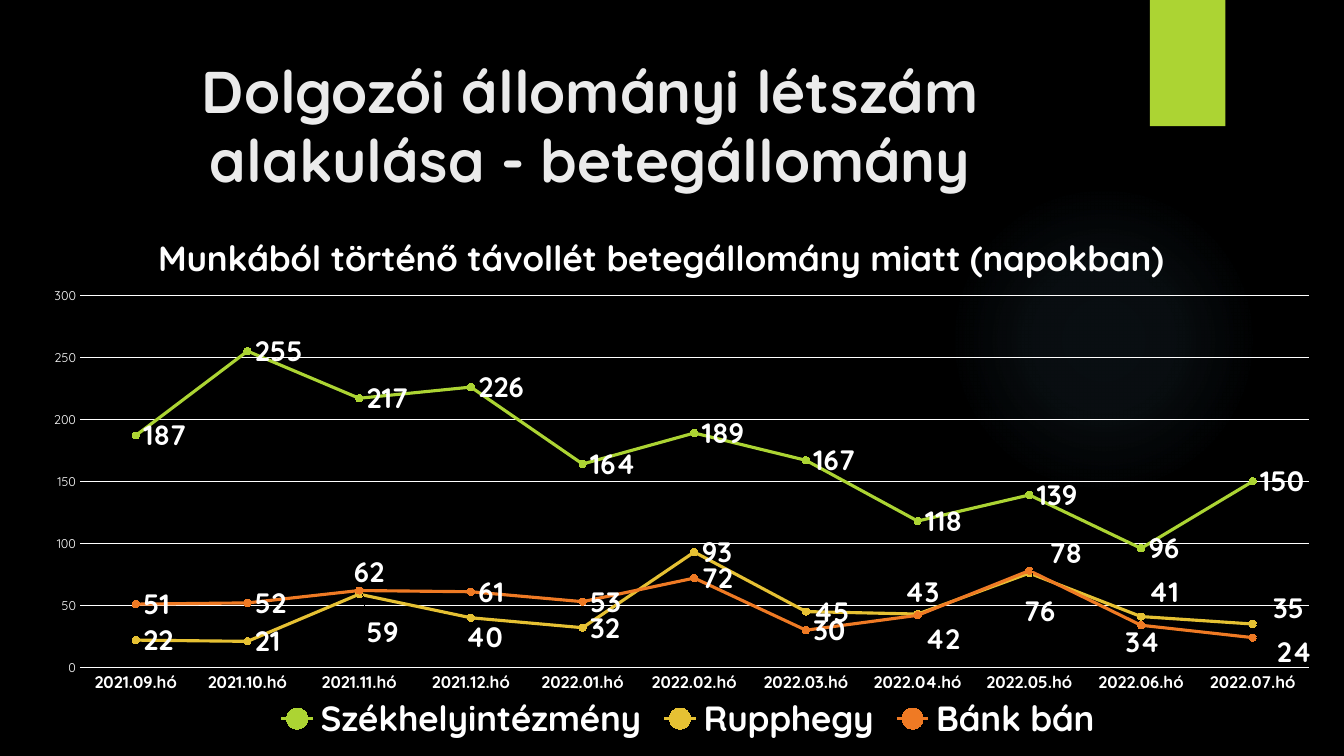
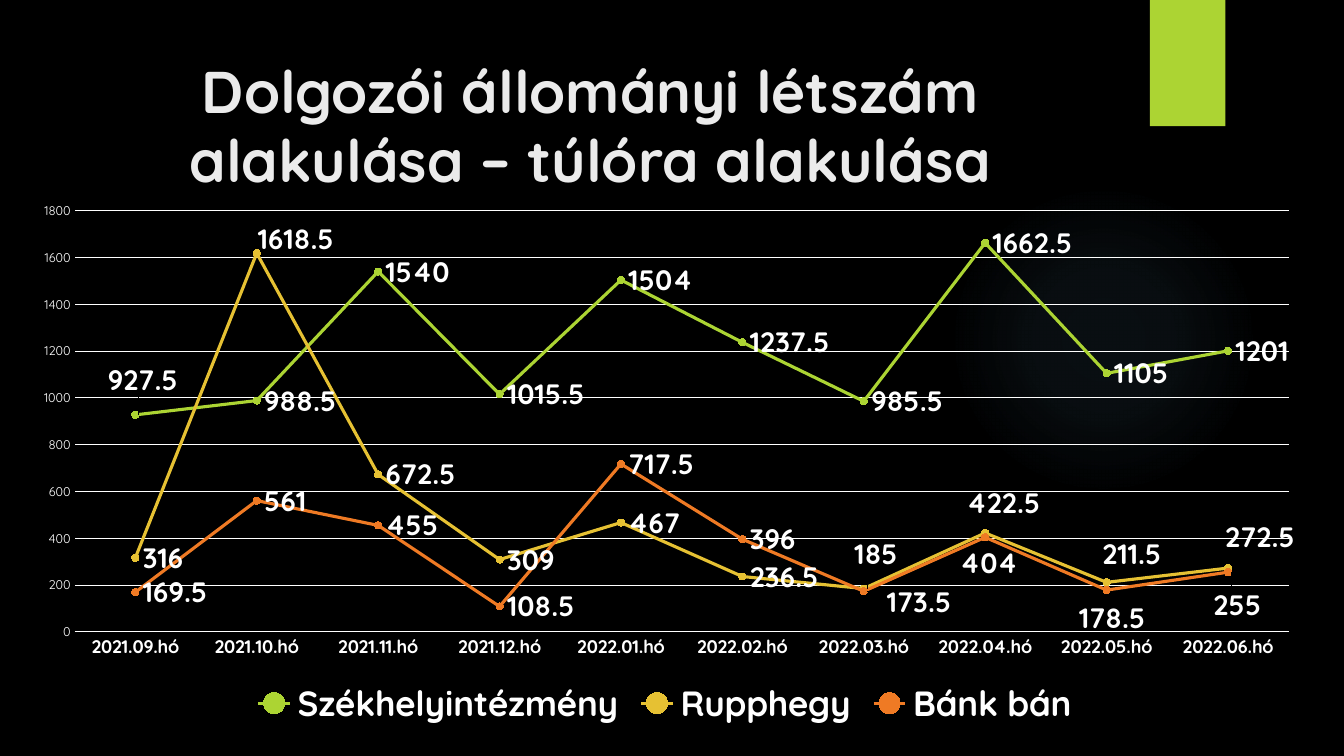
from dataclasses import dataclass, field

from lxml.etree import SubElement
from pptx import Presentation
from pptx.chart.data import CategoryChartData
from pptx.dml.color import RGBColor
from pptx.enum.chart import (XL_CHART_TYPE, XL_LABEL_POSITION, XL_LEGEND_POSITION,
                             XL_MARKER_STYLE, XL_TICK_MARK)
from pptx.enum.shapes import MSO_SHAPE
from pptx.enum.text import MSO_ANCHOR, PP_ALIGN
from pptx.oxml import parse_xml
from pptx.oxml.ns import nsdecls, qn
from pptx.util import Cm, Pt

FONT = "Quicksand"
BLACK = RGBColor(0x00, 0x00, 0x00)
WHITE = RGBColor(0xFF, 0xFF, 0xFF)
TITLE_GREY = RGBColor(0xEB, 0xEB, 0xEB)
GREEN = RGBColor(0xAC, 0xD4, 0x33)
YELLOW = RGBColor(0xE6, 0xC1, 0x33)
ORANGE = RGBColor(0xEF, 0x7A, 0x24)
GLOW_BLUE = RGBColor(0x7A, 0xC4, 0xF0)

MONTHS = ([f"2021.{m:02}.hó" for m in range(9, 13)]
          + [f"2022.{m:02}.hó" for m in range(1, 8)])


@dataclass
class LineSeries:
    """One line; label_shifts maps a point to its label's shift in percent of the chart."""
    name: str
    color: RGBColor
    values: list[float]
    label_shifts: dict[int, tuple[float, float]] = field(default_factory=dict)


@dataclass
class ChartSlide:
    """Box lengths are in cm, plot and heading positions in percent of the chart."""
    title: str
    box: tuple[float, float, float, float]
    plot: tuple[float, float, float, float]
    axis_max: int
    axis_step: int
    month_size: int
    series: list[LineSeries]
    heading: str = ""
    heading_at: tuple[float, float] = (0, 0)


SLIDES = [
    ChartSlide(
        "Dolgozói állományi létszám alakulása - betegállomány",
        (1.14, 5.16, 32.39, 13.67), (2.7, 16.7, 95.6, 68.6), 300, 50, 12,
        [
            LineSeries("Székhelyintézmény", GREEN,
                       [187, 255, 217, 226, 164, 189, 167, 118, 139, 96, 150]),
            LineSeries("Rupphegy", YELLOW,
                       [22, 21, 59, 40, 32, 93, 45, 43, 76, 41, 35],
                       {2: (0, 7), 3: (-1, 3.5), 7: (-1.6, -4), 8: (-1, 7),
                        9: (0, -4.6), 10: (1, -3)}),
            LineSeries("Bánk bán", ORANGE,
                       [51, 52, 62, 61, 53, 72, 30, 42, 78, 34, 24],
                       {2: (-1, -3.5), 7: (0, 4.3), 8: (1, -3.3),
                        9: (-1.8, 3), 10: (1.3, 2.7)}),
        ],
        "Munkából történő távollét betegállomány miatt (napokban)", (8.3, 4)),
    ChartSlide(
        "Dolgozói állományi létszám alakulása – túlóra alakulása",
        (0.41, 4.85, 32.69, 13.59), (4.5, 3.4, 93.6, 78.1), 1800, 200, 13,
        [
            LineSeries("Székhelyintézmény", GREEN,
                       [927.5, 988.5, 1540, 1015.5, 1504, 1237.5, 985.5, 1662.5, 1105, 1201],
                       {0: (-2.7, -6.5)}),
            LineSeries("Rupphegy", YELLOW,
                       [316, 1618.5, 672.5, 309, 467, 236.5, 185, 422.5, 211.5, 272.5],
                       {1: (-0.5, -2.6), 6: (-1.3, -6.5), 7: (-2, -5.6),
                        8: (-0.9, -5.2), 9: (-0.8, -5.8)}),
            LineSeries("Bánk bán", ORANGE,
                       [169.5, 561, 455, 108.5, 717.5, 396, 173.5, 404, 178.5, 255],
                       {6: (1.2, 1.9), 7: (-2.5, 4.7), 8: (-2.7, 5.2), 9: (-1.7, 6.1)}),
        ]),
]


def style_font(font, size: int, bold: bool = True, color: RGBColor = WHITE) -> None:
    font.name = FONT
    font.size = Pt(size)
    font.bold = bold
    font.color.rgb = color


def set_layout(parent, index: int, **values: object) -> None:
    """Replace the manual layout of a chart part, inserted at the given child index."""
    for old in parent.findall(qn("c:layout")):
        parent.remove(old)
    layout = parse_xml(f"<c:layout {nsdecls('c')}><c:manualLayout/></c:layout>")
    for tag, value in values.items():
        SubElement(layout[0], qn(f"c:{tag}")).set("val", str(value))
    parent.insert(index, layout)


def add_decoration(s) -> None:
    """Draw the soft blue glow and the green tab."""
    glow = s.shapes.add_shape(MSO_SHAPE.OVAL, Cm(23.9), Cm(4.65), Cm(7.82), Cm(7.82))
    glow.line.fill.background()
    glow.shadow.inherit = False
    stops = "".join(
        f'<a:gs pos="{pos * 1000}"><a:srgbClr val="{GLOW_BLUE}">'
        f'<a:alpha val="{alpha * 1000}"/></a:srgbClr></a:gs>'
        for pos, alpha in ((0, 7), (36, 6), (69, 0)))
    glow._element.spPr.insert(2, parse_xml(
        f'<a:gradFill {nsdecls("a")}><a:gsLst>{stops}</a:gsLst><a:path path="circle">'
        '<a:fillToRect l="50000" t="50000" r="50000" b="50000"/></a:path></a:gradFill>'))

    tab = s.shapes.add_shape(MSO_SHAPE.RECTANGLE, Cm(28.98), 0, Cm(1.9), Cm(3.18))
    tab.fill.solid()
    tab.fill.fore_color.rgb = GREEN
    tab.line.fill.background()
    tab._element.spPr.append(parse_xml(
        f'<a:effectLst {nsdecls("a")}><a:outerShdw blurRad="{Pt(3)}" dist="{Pt(2)}" '
        f'dir="5400000"><a:srgbClr val="{BLACK}"><a:alpha val="45000"/></a:srgbClr>'
        '</a:outerShdw></a:effectLst>'))


def add_title(s, text: str) -> None:
    tf = s.shapes.add_textbox(Cm(1.8), Cm(1.27), Cm(26.14), Cm(3.89)).text_frame
    tf.word_wrap = True
    tf.vertical_anchor = MSO_ANCHOR.MIDDLE
    tf.text = text
    p = tf.paragraphs[0]
    p.alignment = PP_ALIGN.CENTER
    p.line_spacing = 0.97
    style_font(p.runs[0].font, 42, color=TITLE_GREY)


def style_axes(chart, spec: ChartSlide) -> None:
    months, days = chart.category_axis, chart.value_axis
    for axis in (months, days):
        axis.major_tick_mark = axis.minor_tick_mark = XL_TICK_MARK.NONE
    style_font(months.tick_labels.font, spec.month_size)
    style_font(days.tick_labels.font, 9, bold=False)
    days.minimum_scale = 0
    days.maximum_scale = spec.axis_max
    days.major_unit = spec.axis_step
    days.format.line.fill.background()
    for line in (months.format.line, days.major_gridlines.format.line):
        line.color.rgb = WHITE
        line.width = Pt(0.75)


def style_series(series, spec: LineSeries) -> None:
    series.smooth = False
    series.format.line.color.rgb = spec.color
    series.format.line.width = Pt(2.25)
    marker = series.marker
    marker.style = XL_MARKER_STYLE.CIRCLE
    marker.size = 5
    marker.format.fill.solid()
    marker.format.fill.fore_color.rgb = spec.color
    marker.format.line.color.rgb = spec.color

    labels = series.data_labels
    labels.show_value = True
    labels.position = XL_LABEL_POSITION.RIGHT
    style_font(labels.font, 20)
    for idx, (dx, dy) in spec.label_shifts.items():
        label = series.points[idx].data_label
        label.position = XL_LABEL_POSITION.RIGHT
        style_font(label.font, 20)
        dLbl = labels._element.find(f"{qn('c:dLbl')}[{qn('c:idx')}][@val]")
        dLbl = next(d for d in labels._element.findall(qn("c:dLbl"))
                    if d.find(qn("c:idx")).get("val") == str(idx))
        set_layout(dLbl, 1, x=round(dx / 100, 4), y=round(dy / 100, 4))


def add_line_chart(s, spec: ChartSlide) -> None:
    data = CategoryChartData()
    data.categories = MONTHS[:len(spec.series[0].values)]
    for line in spec.series:
        data.add_series(line.name, line.values)
    chart = s.shapes.add_chart(
        XL_CHART_TYPE.LINE_MARKERS, *map(Cm, spec.box), data).chart
    style_font(chart.font, 10, bold=False)

    chart.has_title = bool(spec.heading)
    if spec.heading:
        tf = chart.chart_title.text_frame
        tf.text = spec.heading
        style_font(tf.paragraphs[0].runs[0].font, 25)
        x, y = spec.heading_at
        set_layout(chart.chart_title._element, 1,
                   xMode="edge", yMode="edge", x=x / 100, y=y / 100)

    chart.has_legend = True
    chart.legend.position = XL_LEGEND_POSITION.BOTTOM
    chart.legend.include_in_layout = False
    style_font(chart.legend.font, 25)

    style_axes(chart, spec)
    plot = chart.plots[0]
    plot.vary_by_categories = False
    for series, line in zip(plot.series, spec.series):
        style_series(series, line)
    x, y, w, h = (round(value / 100, 4) for value in spec.plot)
    set_layout(chart._chartSpace.chart.plotArea, 0, layoutTarget="inner",
               xMode="edge", yMode="edge", x=x, y=y, w=w, h=h)


def main() -> None:
    prs = Presentation()
    prs.slide_width, prs.slide_height = Cm(33.87), Cm(19.05)
    background = prs.slide_master.background.fill
    background.solid()
    background.fore_color.rgb = BLACK
    for spec in SLIDES:
        s = prs.slides.add_slide(prs.slide_layouts[6])
        add_decoration(s)
        add_title(s, spec.title)
        add_line_chart(s, spec)
    prs.save("out.pptx")


if __name__ == "__main__":
    main()
